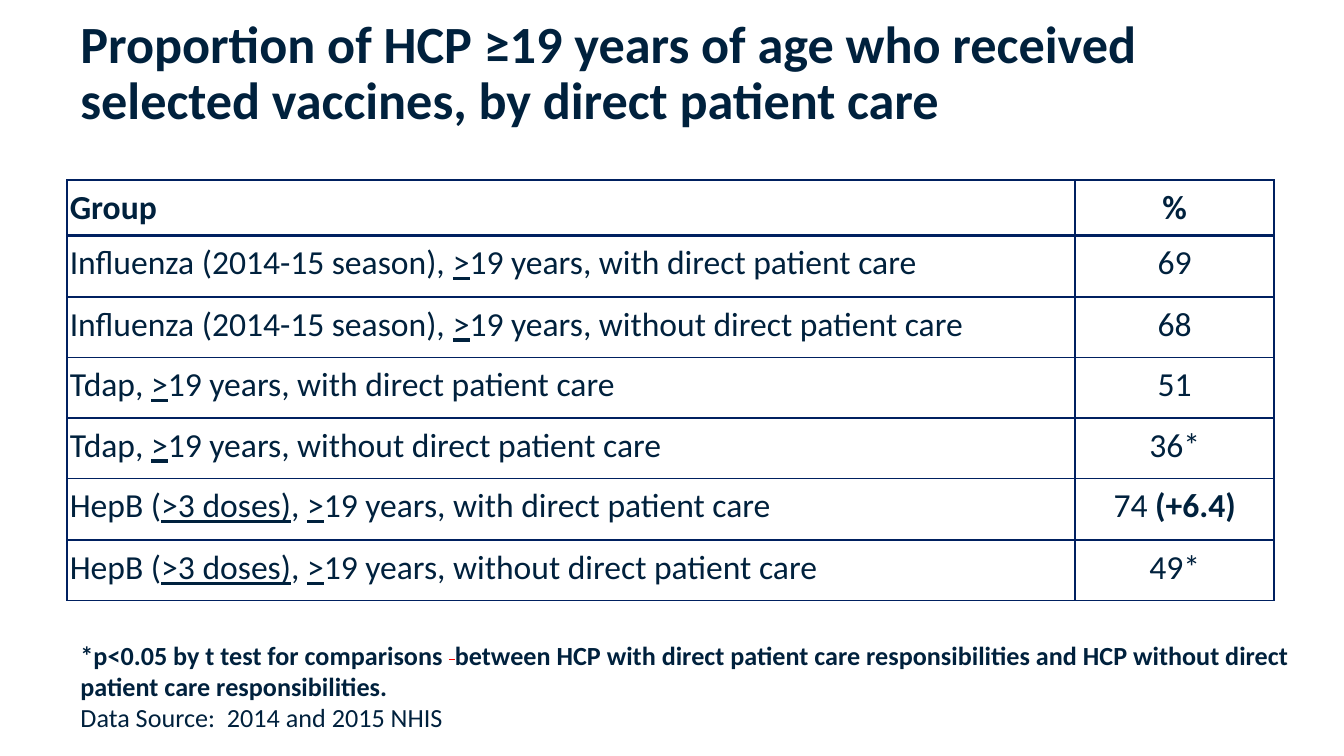
from lxml import etree
from pptx import Presentation
from pptx.dml.color import RGBColor
from pptx.enum.text import MSO_ANCHOR, PP_ALIGN
from pptx.oxml.ns import qn
from pptx.util import Inches, Pt

INK = RGBColor(0x00, 0x21, 0x3D)
RED = RGBColor(0xFF, 0x00, 0x00)
BORDER = RGBColor(0x00, 0x20, 0x60)
FONT = "Calibri"

TITLE = "Proportion of HCP ≥19 years of age who received selected vaccines, by direct patient care"
HEADER = ("Group", "%")
# Each vaccine is a list of (text, underlined) pieces
AGE = [(">", True)]
FLU = [("Influenza (2014-15 season), ", False), *AGE]
TDAP = [("Tdap, ", False), *AGE]
HEPB = [("HepB (", False), (">3 doses)", True), (", ", False), *AGE]
# Vaccine, % with and % without direct patient care; a value is (plain, bold)
RESULTS = [
    (FLU, ("69", ""), ("68", "")),
    (TDAP, ("51", ""), ("36*", "")),
    (HEPB, ("74 ", "(+6.4)"), ("49*", "")),
]
NOTE_START = "*p<0.05 by t test for comparisons "
NOTE_END = ("between HCP with direct patient care responsibilities and HCP "
            "without direct patient care responsibilities.")
SOURCE = "Data Source:  2014 and 2015 NHIS"

COL_WIDTHS = [7.5, 1.48]
ROW_HEIGHTS = [0.41, 0.46, 0.45, 0.45, 0.45, 0.46, 0.45]


def style(p, size, bold=None):
    p.font.name, p.font.size, p.font.bold = FONT, Pt(size), bold
    p.font.color.rgb = INK


def add_run(p, text, bold=None, underline=None):
    r = p.add_run()
    r.text = text
    r.font.bold, r.font.underline = bold, underline
    return r


def add_text_box(s, left, top, width, height, anchor):
    tf = s.shapes.add_textbox(Inches(left), Inches(top), Inches(width), Inches(height)).text_frame
    tf.word_wrap = True
    tf.vertical_anchor = anchor
    return tf


def set_borders(cell, top, bottom):
    tcPr = cell._tc.get_or_add_tcPr()
    sides = [("a:lnL", 1), ("a:lnR", 1), ("a:lnT", top), ("a:lnB", bottom)]
    for i, (tag, width) in enumerate(sides):
        ln = etree.Element(qn(tag), w=str(Pt(width)))
        fill = etree.SubElement(ln, qn("a:solidFill"))
        etree.SubElement(fill, qn("a:srgbClr"), val=str(BORDER))
        tcPr.insert(i, ln)


def format_cell(table, row, column):
    """Style one cell and return its paragraph."""
    cell = table.cell(row, column)
    cell.fill.background()
    cell.margin_left = cell.margin_right = Inches(0.02)
    cell.margin_top = cell.margin_bottom = Inches(0.01)
    set_borders(cell, top=2 if row == 1 else 1, bottom=2 if row == 0 else 1)
    p = cell.text_frame.paragraphs[0]
    p.alignment = PP_ALIGN.CENTER if column else PP_ALIGN.LEFT
    p.line_spacing = 1.15
    p.space_after = Pt(10)
    style(p, 18, row == 0)
    return p


prs = Presentation()
prs.slide_width = Inches(10)
prs.slide_height = prs.slide_width * 9 // 16
s = prs.slides.add_slide(prs.slide_layouts[6])

p = add_text_box(s, 0.5, 0.08, 9, 0.94, MSO_ANCHOR.BOTTOM).paragraphs[0]
p.line_spacing = Pt(30)
style(p, 28, True)
add_run(p, TITLE)

table = s.shapes.add_table(len(ROW_HEIGHTS), len(COL_WIDTHS), Inches(0.5), Inches(1.34),
                           Inches(sum(COL_WIDTHS)), Inches(sum(ROW_HEIGHTS))).table
table.horz_banding = False
for column, width in zip(table.columns, COL_WIDTHS):
    column.width = Inches(width)
for row, height in zip(table.rows, ROW_HEIGHTS):
    row.height = Inches(height)

for c, text in enumerate(HEADER):
    add_run(format_cell(table, 0, c), text, bold=True)

groups = [([*vaccine, (f"19 years, {care} direct patient care", False)], value)
          for vaccine, *values in RESULTS
          for care, value in zip(("with", "without"), values)]
for row, (pieces, (plain, bold)) in enumerate(groups, start=1):
    p = format_cell(table, row, 0)
    for text, underlined in pieces:
        add_run(p, text, bold=False, underline=underlined)
    p = format_cell(table, row, 1)
    add_run(p, plain, bold=False)
    if bold:
        add_run(p, bold, bold=True)

tf = add_text_box(s, 0.5, 4.7, 9.42, 0.81, MSO_ANCHOR.MIDDLE)
p = tf.paragraphs[0]
style(p, 14)
add_run(p, NOTE_START, bold=True)
struck = add_run(p, " ", bold=False)
struck.font.color.rgb = RED
struck._r.get_or_add_rPr().set("strike", "sngStrike")
add_run(p, NOTE_END, bold=True)
p = tf.add_paragraph()
style(p, 14, False)
add_run(p, SOURCE)

prs.save("out.pptx")
